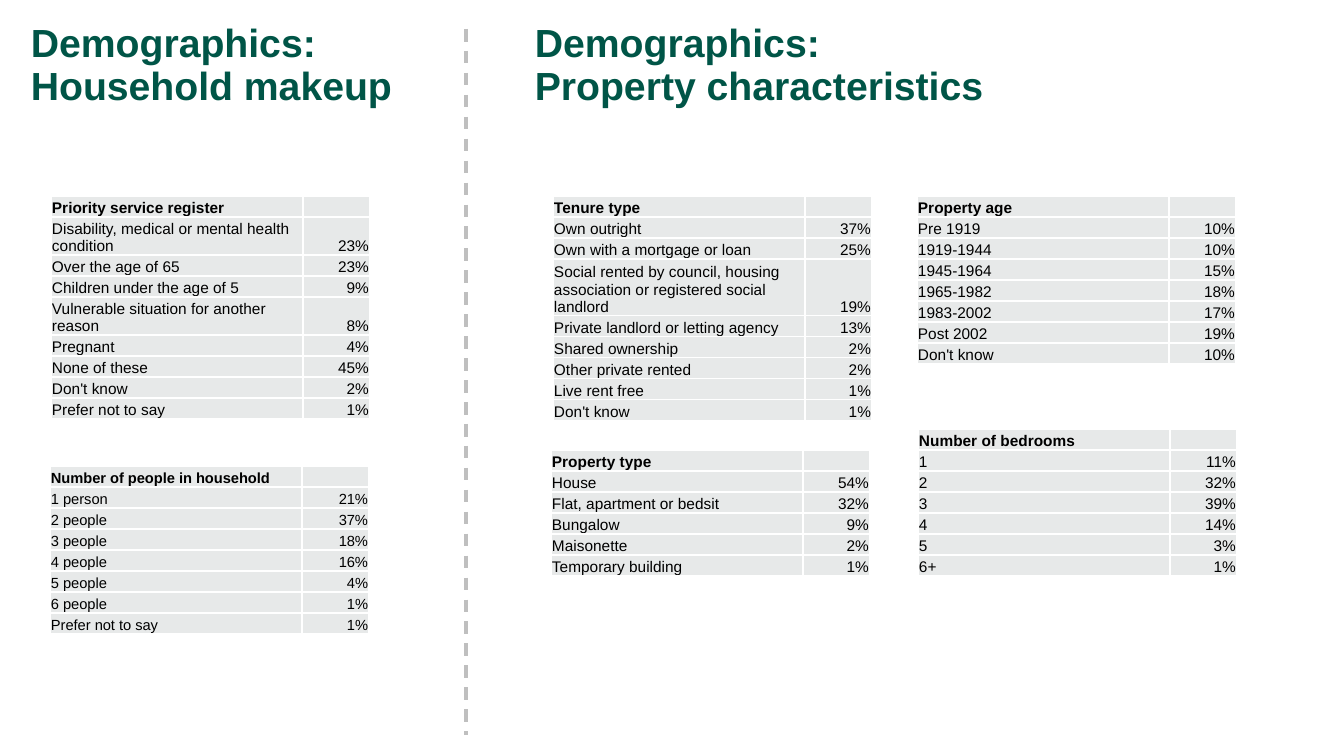
import pptx
import pptx.util
import pptx.dml.color
import pptx.enum.dml
import pptx.enum.shapes
import pptx.enum.text
import pptx.oxml.ns
from lxml import etree

GREEN = pptx.dml.color.RGBColor(0x00, 0x55, 0x47)
BLACK = pptx.dml.color.RGBColor(0x00, 0x00, 0x00)
DIVIDER_GREY = pptx.dml.color.RGBColor(0xBF, 0xBF, 0xBF)
CELL_GREY = pptx.dml.color.RGBColor(0xE7, 0xE9, 0xE9)
WHITE = pptx.dml.color.RGBColor(0xFF, 0xFF, 0xFF)
FONT = "Arial"

TITLES = [
    (21, 19, 482, 61, ["Demographics: Household makeup"]),
    (525, 19, 694, 61, ["Demographics:", "Property characteristics"]),
]

TABLES = [
    (51, 196, 11, "Priority service register", [
        ("Disability, medical or mental health condition", 23),
        ("Over the age of 65", 23),
        ("Children under the age of 5", 9),
        ("Vulnerable situation for another reason", 8),
        ("Pregnant", 4),
        ("None of these", 45),
        ("Don't know", 2),
        ("Prefer not to say", 1),
    ]),
    (50, 466, 10.5, "Number of people in household", [
        ("1 person", 21),
        ("2 people", 37),
        ("3 people", 18),
        ("4 people", 16),
        ("5 people", 4),
        ("6 people", 1),
        ("Prefer not to say", 1),
    ]),
    (553, 196, 11, "Tenure type", [
        ("Own outright", 37),
        ("Own with a mortgage or loan", 25),
        ("Social rented by council, housing association or registered social landlord", 19),
        ("Private landlord or letting agency", 13),
        ("Shared ownership", 2),
        ("Other private rented", 2),
        ("Live rent free", 1),
        ("Don't know", 1),
    ]),
    (551, 450, 11, "Property type", [
        ("House", 54),
        ("Flat, apartment or bedsit", 32),
        ("Bungalow", 9),
        ("Maisonette", 2),
        ("Temporary building", 1),
    ]),
    (918, 429, 11, "Number of bedrooms", [
        ("1", 11),
        ("2", 32),
        ("3", 39),
        ("4", 14),
        ("5", 3),
        ("6+", 1),
    ]),
    (917, 196, 11, "Property age", [
        ("Pre 1919", 10),
        ("1919-1944", 10),
        ("1945-1964", 15),
        ("1965-1982", 18),
        ("1983-2002", 17),
        ("Post 2002", 19),
        ("Don't know", 10),
    ]),
]

COLUMN_WIDTHS = (252, 67)
ROW_HEIGHT = 21
TALL_ROWS = {"Disability": 42, "Vulnerable": 35, "Social": 52}


def px(n):
    return pptx.util.Emu(round(n * 914400 / 100.8))


def add_run(p, text, size, color, bold):
    r = p.add_run()
    r.text = text
    r.font.name = FONT
    r.font.size = pptx.util.Pt(size)
    r.font.bold = bold
    r.font.color.rgb = color


def add_title(slide, x, y, w, h, lines):
    tf = slide.shapes.add_textbox(px(x), px(y), px(w), px(h)).text_frame
    tf.word_wrap = True
    for i, line in enumerate(lines):
        p = tf.add_paragraph() if i else tf.paragraphs[0]
        p.line_spacing = 0.9
        add_run(p, line, 28, GREEN, True)


def add_divider(slide):
    sp = slide.shapes.add_connector(
        pptx.enum.shapes.MSO_CONNECTOR.STRAIGHT, px(466), px(29), px(466), px(735))
    sp.line.color.rgb = DIVIDER_GREY
    sp.line.width = pptx.util.Pt(2.25)
    sp.line.dash_style = pptx.enum.dml.MSO_LINE.DASH
    etree.SubElement(sp._element.spPr, pptx.oxml.ns.qn("a:effectLst"))


def style_cell(cell):
    qn = pptx.oxml.ns.qn
    cell.margin_left = cell.margin_top = cell.margin_right = px(1)
    cell.margin_bottom = 0
    cell.vertical_anchor = pptx.enum.text.MSO_ANCHOR.BOTTOM
    for side in ("lnL", "lnR", "lnT", "lnB"):
        ln = etree.SubElement(cell._tc.tcPr, qn(f"a:{side}"), w=str(pptx.util.Pt(1)))
        fill = etree.SubElement(ln, qn("a:solidFill"))
        etree.SubElement(fill, qn("a:srgbClr"), val=str(WHITE))
    cell.fill.solid()
    cell.fill.fore_color.rgb = CELL_GREY


def add_percent_table(slide, x, y, size, heading, entries):
    rows = [(heading, "")] + [(label, f"{value}%") for label, value in entries]
    heights = [TALL_ROWS.get(label.split()[0], ROW_HEIGHT) for label, _ in rows]
    table = slide.shapes.add_table(
        len(rows), 2, px(x), px(y), px(sum(COLUMN_WIDTHS)), px(sum(heights))).table
    table.first_row = False
    table.horz_banding = False
    for column, width in zip(table.columns, COLUMN_WIDTHS):
        column.width = px(width)
    for i, texts in enumerate(rows):
        table.rows[i].height = px(heights[i])
        for j, text in enumerate(texts):
            cell = table.cell(i, j)
            style_cell(cell)
            p = cell.text_frame.paragraphs[0]
            if j:
                p.alignment = pptx.enum.text.PP_ALIGN.RIGHT
            if text:
                add_run(p, text, size, BLACK, i == 0)
            else:
                etree.SubElement(
                    p._p, pptx.oxml.ns.qn("a:endParaRPr"), sz=str(round(size * 100)))


def main():
    prs = pptx.Presentation()
    prs.slide_width, prs.slide_height = px(1344), px(756)
    slide = prs.slides.add_slide(prs.slide_layouts[6])
    for title in TITLES:
        add_title(slide, *title)
    add_divider(slide)
    for table in TABLES:
        add_percent_table(slide, *table)
    prs.save("out.pptx")


if __name__ == "__main__":
    main()
